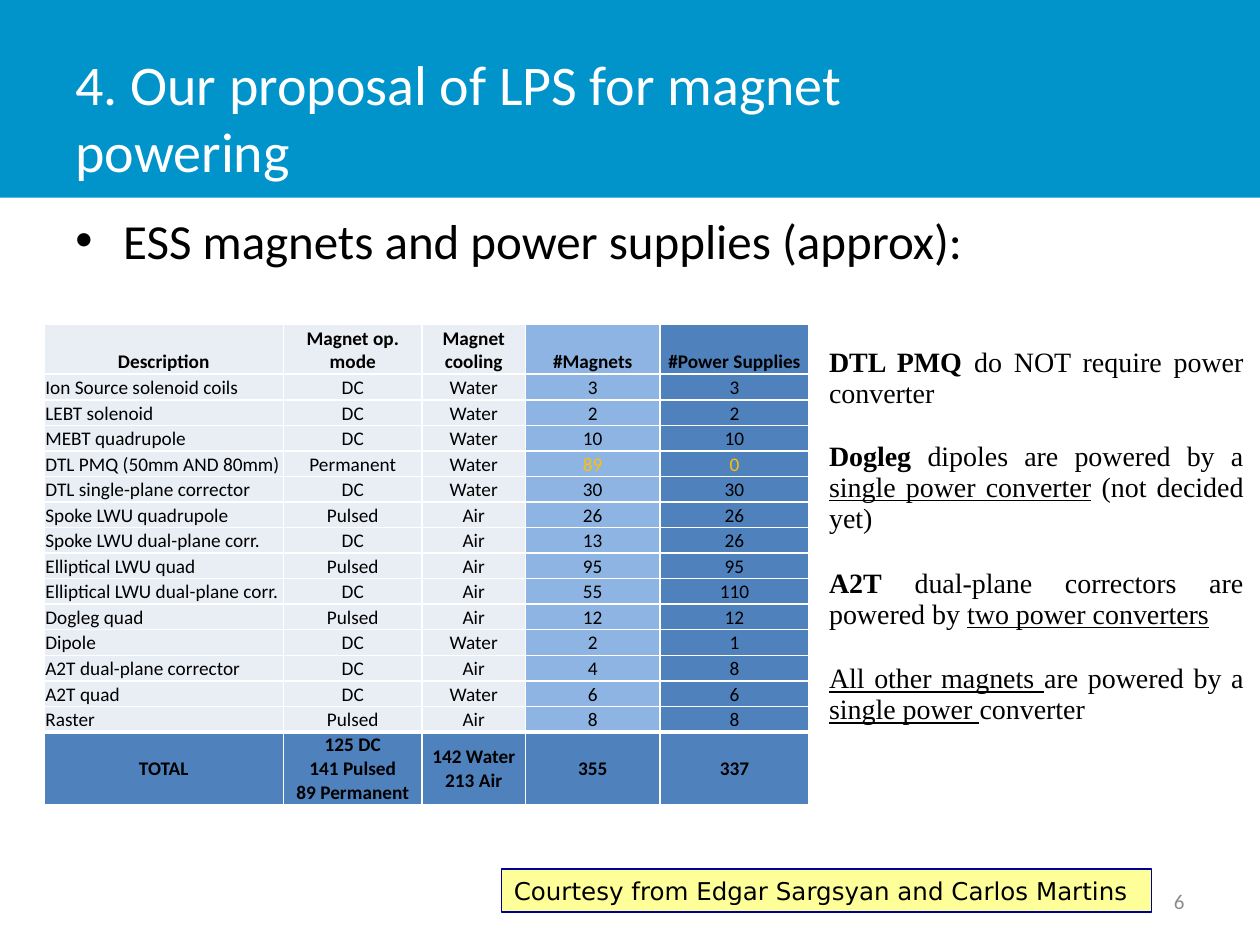
from lxml import etree
from pptx import Presentation
from pptx import util as u
from pptx.dml.color import RGBColor
from pptx.enum import shapes, text
from pptx.oxml import ns

BLUE_BAND = RGBColor(0x00, 0x94, 0xCA)
PALE = RGBColor(0xE9, 0xED, 0xF4)
LIGHT_BLUE = RGBColor(0x8E, 0xB4, 0xE3)
MID_BLUE = RGBColor(0x4F, 0x81, 0xBD)
AMBER = RGBColor(0xFF, 0xC0, 0x00)
YELLOW = RGBColor(0xFF, 0xFF, 0x99)
NAVY = RGBColor(0x00, 0x00, 0x99)
GREY = RGBColor(0x8C, 0x8C, 0x8C)
BLACK = RGBColor(0, 0, 0)
WHITE = RGBColor(255, 255, 255)
ALIGN, ANCHOR = text.PP_ALIGN, text.MSO_ANCHOR

deck = Presentation()
deck.slide_width, deck.slide_height = u.Inches(10), u.Inches(7.5)
slide = deck.slides.add_slide(deck.slide_layouts[6])

# The slide is a grid of 100 columns by 75 rows
COL, ROW = deck.slide_width / 100, deck.slide_height / 75


def grid(left, top, width, height):
    return int(left * COL), int(top * ROW), int(width * COL), int(height * ROW)


def style(paragraph, size, color, font="Calibri", align=ALIGN.LEFT, bold=None):
    paragraph.alignment = align
    for run in paragraph.runs:
        run.font.size, run.font.name = u.Pt(size), font
        run.font.color.rgb = color
        if bold is not None:
            run.font.bold = bold


# Title band
band = slide.shapes.add_shape(shapes.MSO_SHAPE.RECTANGLE, *grid(0, 0, 100, 15.7))
band.shadow.inherit = False
band.fill.solid()
band.fill.fore_color.rgb = BLUE_BAND
band.line.fill.background()

# Title, page number and lead bullet
for words, place, size, color, align, anchor in [
    ("4. Our proposal of LPS for magnet powering", (5, 3, 78.1, 12.5),
     32, WHITE, ALIGN.LEFT, ANCHOR.MIDDLE),
    ("6", (71.7, 69.5, 23.3, 4), 12, GREY, ALIGN.RIGHT, ANCHOR.MIDDLE),
    ("ESS magnets and power supplies (approx):", (5, 16.2, 90, 6.6),
     28, BLACK, ALIGN.LEFT, ANCHOR.TOP),
]:
    lead = slide.shapes.add_textbox(*grid(*place))
    lead.text_frame.word_wrap = True
    lead.text_frame.vertical_anchor = anchor
    lead.text_frame.text = words
    style(lead.text_frame.paragraphs[0], size, color, align=align)

bullet = lead.text_frame.paragraphs[0]._p.get_or_add_pPr()
bullet.set("marL", str(int(3.8 * COL)))
bullet.set("indent", str(int(-3.8 * COL)))
etree.SubElement(bullet, ns.qn("a:buFont")).set("typeface", "Arial")
etree.SubElement(bullet, ns.qn("a:buChar")).set("char", "•")

# Magnet table
magnets = [
    ("Description", "Magnet op. mode", "Magnet cooling", "#Magnets", "#Power Supplies"),
    ("Ion Source solenoid coils", "DC", "Water", "3", "3"),
    ("LEBT solenoid", "DC", "Water", "2", "2"),
    ("MEBT quadrupole", "DC", "Water", "10", "10"),
    ("DTL PMQ (50mm AND 80mm)", "Permanent", "Water", "89", "0"),
    ("DTL single-plane corrector", "DC", "Water", "30", "30"),
    ("Spoke LWU quadrupole", "Pulsed", "Air", "26", "26"),
    ("Spoke LWU dual-plane corr.", "DC", "Air", "13", "26"),
    ("Elliptical LWU quad", "Pulsed", "Air", "95", "95"),
    ("Elliptical LWU dual-plane corr.", "DC", "Air", "55", "110"),
    ("Dogleg quad", "Pulsed", "Air", "12", "12"),
    ("Dipole", "DC", "Water", "2", "1"),
    ("A2T dual-plane corrector", "DC", "Air", "4", "8"),
    ("A2T quad", "DC", "Water", "6", "6"),
    ("Raster", "Pulsed", "Air", "8", "8"),
    ("TOTAL", "125 DC\n141 Pulsed\n89 Permanent", "142 Water\n213 Air", "355", "337"),
]
# Explanatory notes: (words, bold, underlined) per run
notes = [
    [[("DTL PMQ", True, False), (" do NOT require power converter", False, False)],
     [("Dogleg ", True, False), ("dipoles are powered by a ", False, False),
      ("single power converter", False, True), (" (not decided yet)", False, False)]],
    [[("A2T", True, False), (" dual-plane correctors are powered by ", False, False),
      ("two power converters", False, True)]],
    [[("All other magnets ", False, True), ("are powered by a ", False, False),
      ("single power ", False, True), ("converter", False, False)]],
]
total = len(magnets) - 1
magnet_rows = [4] + [2.03] * (total - 1) + [5.8]
tables = []
for left, top, widths, heights in [
    (3.5, 25.7, [19, 11, 8.2, 10.7, 11.8], magnet_rows),
    (65.7, 26.5, [33.1], [15, 7.6, 7.6]),
]:
    table = slide.shapes.add_table(
        len(heights), len(widths), *grid(left, top, sum(widths), sum(heights))).table
    table.first_row = table.horz_banding = False
    for column, width in zip(table.columns, widths):
        column.width = int(width * COL)
    for row, height in zip(table.rows, heights):
        row.height = int(height * ROW)
    for cell in table.iter_cells():
        cell.margin_left = cell.margin_right = cell.margin_top = int(0.1 * COL)
        cell.margin_bottom = 0
        cell.vertical_anchor = ANCHOR.BOTTOM
    tables.append(table)
magnet_table, note_table = tables

column_fills = [PALE, PALE, PALE, LIGHT_BLUE, MID_BLUE]
for r, entries in enumerate(magnets):
    for c, entry in enumerate(entries):
        cell = magnet_table.cell(r, c)
        cell.text_frame.text = entry
        if r == total:
            cell.vertical_anchor = ANCHOR.MIDDLE
        permanent = entries[1] == "Permanent" and c >= 3
        for paragraph in cell.text_frame.paragraphs:
            style(paragraph, 11, AMBER if permanent else BLACK,
                  align=ALIGN.LEFT if c == 0 and 0 < r < total else ALIGN.CENTER,
                  bold=r in (0, total))
        # White borders go before the fill; a thicker one tops the total
        for side in ("lnL", "lnR", "lnT", "lnB"):
            thick = (r, side) in ((total, "lnT"), (total - 1, "lnB"))
            border = etree.SubElement(cell._tc.get_or_add_tcPr(), ns.qn("a:" + side))
            border.set("w", str(u.Pt(3 if thick else 1)))
            paint = etree.SubElement(border, ns.qn("a:solidFill"))
            etree.SubElement(paint, ns.qn("a:srgbClr")).set("val", str(WHITE))
        cell.fill.solid()
        cell.fill.fore_color.rgb = MID_BLUE if r == total else column_fills[c]

# Notes beside the table
for r, note in enumerate(notes):
    cell = note_table.cell(r, 0)
    cell.fill.background()
    for i, pieces in enumerate(note):
        frame = cell.text_frame
        paragraph = frame.add_paragraph() if i else frame.paragraphs[0]
        if i:
            paragraph.space_before = u.Pt(18)
        for words, bold, underlined in pieces:
            run = paragraph.add_run()
            run.text = words
            run.font.bold, run.font.underline = bold, underlined
        style(paragraph, 16, BLACK, "Times New Roman", ALIGN.JUSTIFY)

# Credit box
credit = slide.shapes.add_shape(shapes.MSO_SHAPE.RECTANGLE, *grid(39.8, 69, 51.6, 3.4))
credit.shadow.inherit = False
credit.fill.solid()
credit.fill.fore_color.rgb = YELLOW
credit.line.color.rgb = NAVY
credit.line.width = u.Pt(1)
credit.text_frame.word_wrap = False
credit.text_frame.vertical_anchor = ANCHOR.TOP
credit.text_frame.text = "Courtesy from Edgar Sargsyan and Carlos Martins"
style(credit.text_frame.paragraphs[0], 14, BLACK, "DejaVu Sans")

deck.save("out.pptx")
